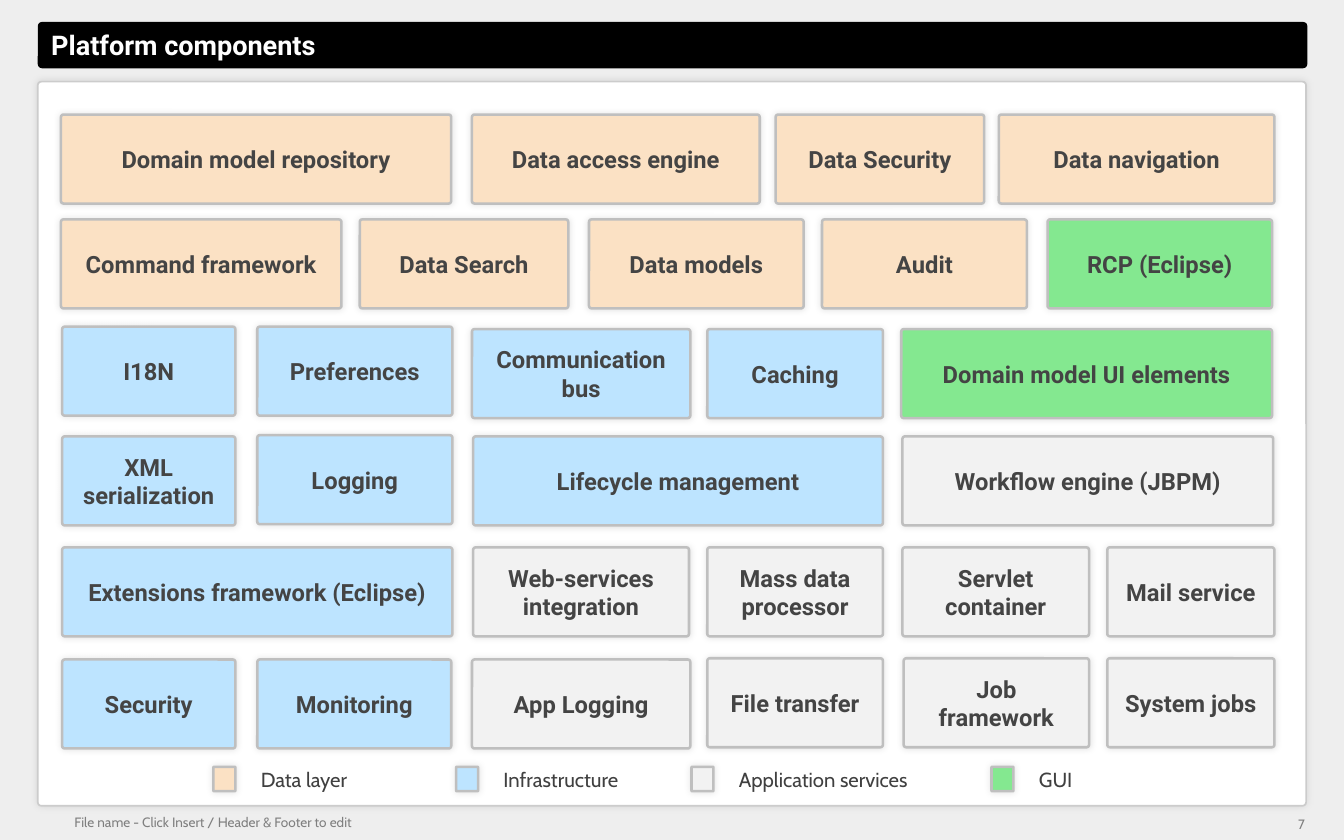
from lxml.etree import SubElement
from pptx import Presentation
from pptx.dml.color import RGBColor
from pptx.enum.shapes import MSO_SHAPE
from pptx.enum.text import MSO_ANCHOR, PP_ALIGN
from pptx.oxml.ns import qn
from pptx.util import Inches, Pt

BACKGROUND = RGBColor(0xEE, 0xEE, 0xEE)
BLACK = RGBColor(0x00, 0x00, 0x00)
WHITE = RGBColor(0xFF, 0xFF, 0xFF)
PANEL_LINE = RGBColor(0xCC, 0xCC, 0xCC)
BOX_LINE = RGBColor(0xBF, 0xBF, 0xBF)
BOX_TEXT = RGBColor(0x44, 0x44, 0x44)
LEGEND_TEXT = RGBColor(0x40, 0x40, 0x40)
FOOTER_TEXT = RGBColor(0x7F, 0x7F, 0x7F)
DATA = RGBColor(0xFB, 0xE1, 0xC4)
INFRASTRUCTURE = RGBColor(0xBD, 0xE4, 0xFF)
SERVICES = RGBColor(0xF2, 0xF2, 0xF2)
GUI = RGBColor(0x84, 0xE8, 0x90)

BOX_HEIGHT = 0.73
BOX_CORNER = 0.029

# Left, top, width, label
COMPONENTS = {
    DATA: [
        (0.5, 0.94, 3.2, "Domain model repository"),
        (3.87, 0.94, 2.36, "Data access engine"),
        (6.36, 0.94, 1.71, "Data Security"),
        (8.19, 0.94, 2.26, "Data navigation"),
        (0.5, 1.8, 2.3, "Command framework"),
        (2.95, 1.8, 1.71, "Data Search"),
        (4.83, 1.8, 1.76, "Data models"),
        (6.74, 1.8, 1.68, "Audit"),
    ],
    INFRASTRUCTURE: [
        (0.51, 2.68, 1.42, "I18N"),
        (2.11, 2.68, 1.6, "Preferences"),
        (3.87, 2.7, 1.79, "Communication bus"),
        (5.8, 2.7, 1.44, "Caching"),
        (0.51, 3.58, 1.42, "XML serialization"),
        (2.11, 3.57, 1.6, "Logging"),
        (3.88, 3.58, 3.36, "Lifecycle management"),
        (0.51, 4.49, 3.2, "Extensions framework (Eclipse)"),
        (0.51, 5.41, 1.42, "Security"),
        (2.11, 5.41, 1.59, "Monitoring"),
    ],
    SERVICES: [
        (7.4, 3.58, 3.04, "Workflow engine (JBPM)"),
        (3.88, 4.49, 1.77, "Web-services integration"),
        (5.8, 4.49, 1.44, "Mass data processor"),
        (7.4, 4.49, 1.53, "Servlet container"),
        (9.08, 4.49, 1.37, "Mail service"),
        (3.87, 5.41, 1.79, "App Logging"),
        (5.8, 5.4, 1.44, "File transfer"),
        (7.41, 5.4, 1.52, "Job framework"),
        (9.08, 5.4, 1.37, "System jobs"),
    ],
    GUI: [
        (8.59, 1.8, 1.84, "RCP (Eclipse)"),
        (7.39, 2.7, 3.04, "Domain model UI elements"),
    ],
}

# Swatch left, text width, label, colour
LEGEND = [
    (1.75, 1, "Data layer", DATA),
    (3.74, 1.27, "Infrastructure", INFRASTRUCTURE),
    (5.67, 1.75, "Application services", SERVICES),
    (8.13, 0.49, "GUI", GUI),
]


def add_soft_shadow(shape):
    """Surround the shape with a faint, centred blur."""
    shape.shadow.inherit = False
    effects = shape._element.spPr.find(qn("a:effectLst"))
    shadow = SubElement(effects, qn("a:outerShdw"), blurRad=str(Pt(4)),
                        dist="0", dir="0", algn="ctr", rotWithShape="0")
    color = SubElement(shadow, qn("a:srgbClr"), val=str(BLACK))
    SubElement(color, qn("a:alpha"), val="11000")


def add_rounded_box(slide, left, top, width, height, corner, fill,
                    line=None, line_width=1.5):
    shape = slide.shapes.add_shape(
        MSO_SHAPE.ROUNDED_RECTANGLE,
        Inches(left), Inches(top), Inches(width), Inches(height))
    shape.adjustments[0] = corner
    shape.fill.solid()
    shape.fill.fore_color.rgb = fill
    if line is None:
        shape.shadow.inherit = False
        shape.line.fill.background()
    else:
        add_soft_shadow(shape)
        shape.line.color.rgb = line
        shape.line.width = Pt(line_width)
    return shape


def write_text(shape, text, font_name, size, color, bold=False,
               align=PP_ALIGN.LEFT, anchor=MSO_ANCHOR.MIDDLE,
               margins=(0, 0), wrap=True):
    """Fill the shape with one paragraph; margins are horizontal, vertical."""
    frame = shape.text_frame
    frame.word_wrap = wrap
    frame.vertical_anchor = anchor
    frame.margin_left = frame.margin_right = Inches(margins[0])
    frame.margin_top = frame.margin_bottom = Inches(margins[1])
    paragraph = frame.paragraphs[0]
    paragraph.text = text
    paragraph.alignment = align
    font = paragraph.font
    font.name = font_name
    font.size = Pt(size)
    font.bold = bold
    font.color.rgb = color


def add_label(slide, left, top, width, height, text, *style, **options):
    """Add a text box; the remaining arguments go to write_text."""
    label = slide.shapes.add_textbox(
        Inches(left), Inches(top), Inches(width), Inches(height))
    write_text(label, text, *style, **options)


def add_component(slide, left, top, width, name, fill):
    box = add_rounded_box(slide, left, top, width, BOX_HEIGHT,
                          BOX_CORNER, fill, BOX_LINE)
    write_text(box, name, "Roboto", 14, BOX_TEXT, bold=True,
               align=PP_ALIGN.CENTER, margins=(0.13, 0.06))


def add_legend_entry(slide, left, text_width, name, fill):
    add_rounded_box(slide, left, 6.29, 0.18, 0.2, BOX_CORNER, fill, BOX_LINE)
    add_label(slide, left + 0.29, 6.24, text_width, 0.3, name, "Cabin", 12,
              LEGEND_TEXT, anchor=MSO_ANCHOR.TOP, margins=(0.1, 0.05),
              wrap=False)


def add_frame(slide):
    """Add the title bar, content panel and footer."""
    slide.background.fill.solid()
    slide.background.fill.fore_color.rgb = BACKGROUND
    add_rounded_box(slide, 0.31, 0.18, 10.41, 0.38, 0.09, BLACK)
    add_rounded_box(slide, 0.31, 0.67, 10.4, 5.94, 0.005, WHITE, PANEL_LINE, 1)
    add_label(slide, 0.39, 0.19, 8.69, 0.35, "Platform components",
              "Roboto", 16, WHITE, bold=True, margins=(0.03, 0.03))
    add_label(slide, 0.61, 6.68, 9.71, 0.13,
              "File name - Click Insert / Header & Footer to edit",
              "Cabin", 8, FOOTER_TEXT)
    add_label(slide, 10.32, 6.66, 0.44, 0.19, "7", "Cabin", 8, FOOTER_TEXT,
              align=PP_ALIGN.RIGHT, anchor=MSO_ANCHOR.TOP,
              margins=(0.06, 0.03))


def main():
    presentation = Presentation()
    presentation.slide_width = Inches(11.02)
    presentation.slide_height = Inches(6.89)
    slide = presentation.slides.add_slide(presentation.slide_layouts[6])
    add_frame(slide)
    for fill, boxes in COMPONENTS.items():
        for left, top, width, name in boxes:
            add_component(slide, left, top, width, name, fill)
    for entry in LEGEND:
        add_legend_entry(slide, *entry)
    presentation.save("out.pptx")


if __name__ == "__main__":
    main()
